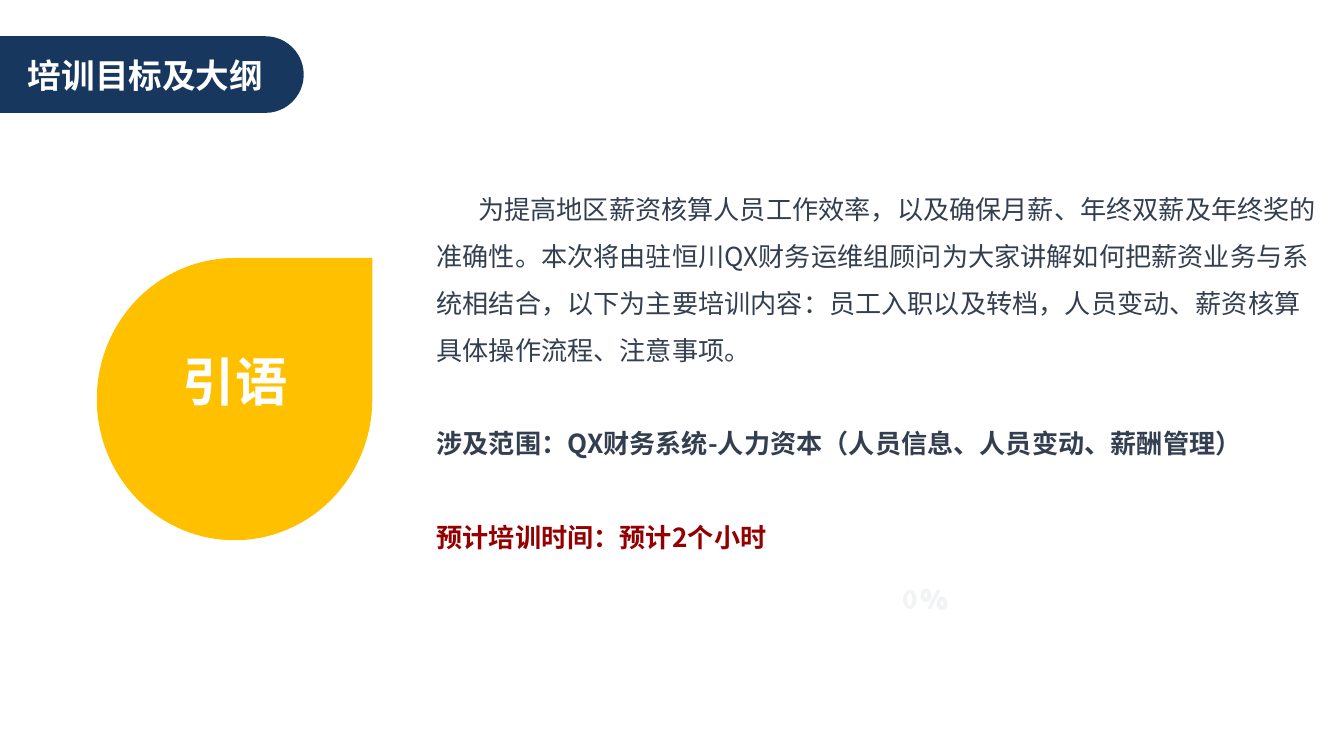
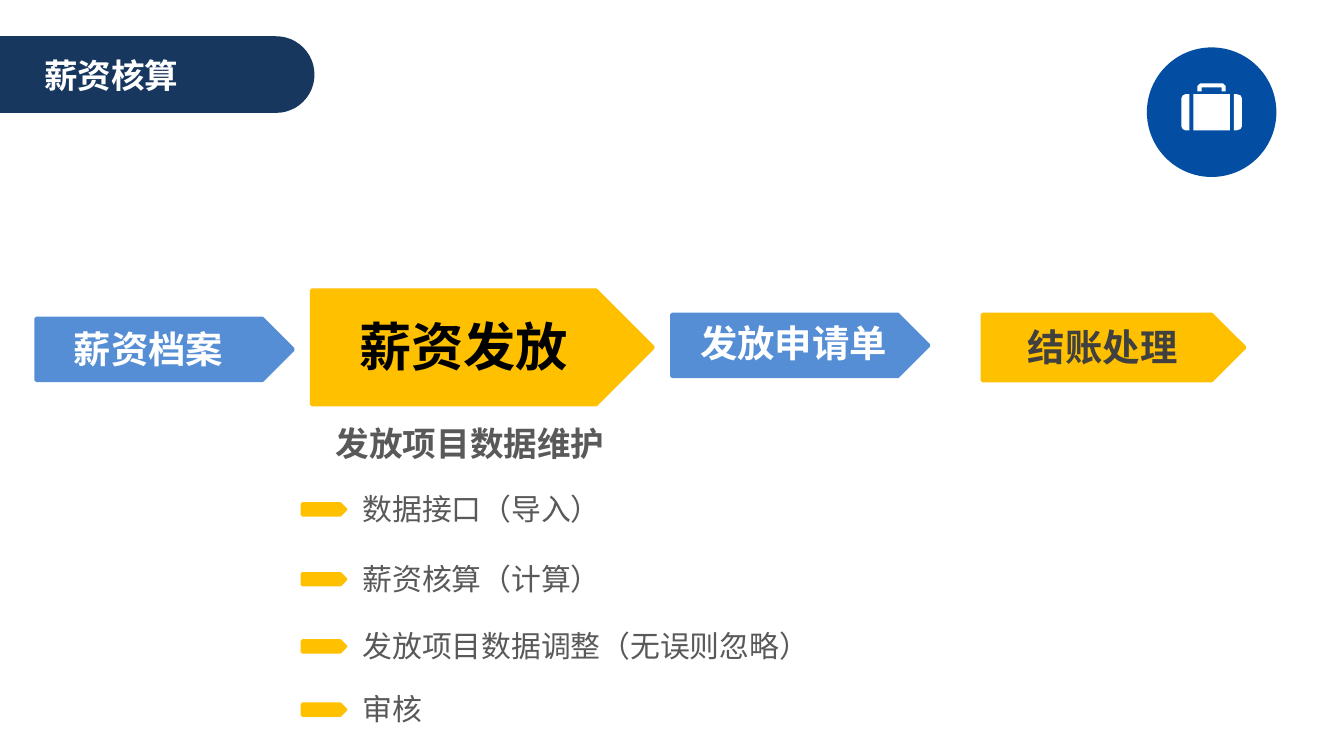
import math

from lxml import etree
from pptx import Presentation
from pptx import util as u
from pptx.dml.color import RGBColor
from pptx.enum import shapes, text
from pptx.oxml.ns import qn

FONT = "Noto Sans CJK SC"
COLORS = {
    "navy": "17375E", "royal": "034EA2", "blue": "558ED5", "gold": "FFC000",
    "white": "FFFFFF", "black": "000000", "slate": "333F50", "red": "940000",
    "gray": "595959", "charcoal": "404040", "faint": "F2F3F4",
}
KINDS = shapes.MSO_SHAPE


def write(slide, box, paragraphs, size, color, bold=False, align=text.PP_ALIGN.LEFT,
          inset=(0.1, 0.05), wrap=True, spacing=None):
    frame = slide.shapes.add_textbox(*map(u.Inches, box)).text_frame
    frame.word_wrap = wrap
    frame.auto_size = text.MSO_AUTO_SIZE.SHAPE_TO_FIT_TEXT
    frame.margin_left = frame.margin_right = u.Inches(inset[0])
    frame.margin_top = frame.margin_bottom = u.Inches(inset[1])
    if isinstance(paragraphs, str):
        paragraphs = [(paragraphs, color, bold, 0, 0)]
    for number, (words, tone, heavy, indent, before) in enumerate(paragraphs):
        line = frame.add_paragraph() if number else frame.paragraphs[0]
        line.alignment = align
        if spacing:
            line.line_spacing = spacing
        if before:
            line.space_before = u.Pt(before)
        if indent:
            line._p.get_or_add_pPr().set("indent", str(u.Inches(indent)))
        run = line.add_run()
        run.text = words
        run.font.size = u.Pt(size)
        run.font.bold = heavy
        run.font.color.rgb = RGBColor.from_string(COLORS[tone])
        run.font.name = FONT
        etree.SubElement(run._r.get_or_add_rPr(), qn("a:ea"), typeface=FONT)


def paint(part, color, border=0):
    part.shadow.inherit = False
    part.fill.solid()
    part.fill.fore_color.rgb = RGBColor.from_string(COLORS[color])
    if border:
        part.line.color.rgb = RGBColor.from_string(COLORS[color])
        part.line.width = u.Pt(border)
    else:
        part.line.fill.background()
    return part


deck = Presentation()
deck.slide_width = u.Inches(10)
deck.slide_height = deck.slide_width * 9 // 16
blank = deck.slide_layouts[6]
goals = deck.slides.add_slide(blank)
payroll = deck.slides.add_slide(blank)

drop = goals.shapes.add_shape(KINDS.TEAR, *map(u.Inches, (0.72, 1.92, 2.05, 2.1)))
paint(drop, "gold").adjustments[0] = 1
write(goals, (0.98, 2.81, 1.54, 0.31), "引语", 28, "white", bold=True,
      align=text.PP_ALIGN.CENTER, spacing=u.Pt(15))
introduction = [
    ("为提高地区薪资核算人员工作效率，以及确保月薪、年终双薪及年终奖的准确性。"
     "本次将由驻恒川QX财务运维组顾问为大家讲解如何把薪资业务与系统相结合，"
     "以下为主要培训内容：员工入职以及转档，人员变动、薪资核算具体操作流程、注意事项。",
     "slate", False, 0.31, 0),
    ("涉及范围：QX财务系统-人力资本（人员信息、人员变动、薪酬管理）", "slate", True, 0, 25),
    ("预计培训时间：预计2个小时", "red", True, 0, 25),
]
write(goals, (3.15, 1.27, 6.76, 2.93), introduction, 14, "slate", spacing=1.5)

badge = payroll.shapes.add_shape(KINDS.OVAL, *map(u.Inches, (8.54, 0.36, 0.95, 0.95)))
paint(badge, "royal", border=1)

turns = [math.tau * step / 24 for step in range(24)]
zero, upper, lower = [
    [[(x + rx * math.cos(turn), y + ry * math.sin(turn)) for turn in turns]
     for rx, ry in radii]
    for x, y, radii in [
        (6.77, 4.46, [(0.05, 0.07), (0.02, 0.05)]),
        (6.89, 4.43, [(0.04, 0.05), (0.01, 0.02)]),
        (7.01, 4.49, [(0.04, 0.05), (0.01, 0.02)]),
    ]
]
slash = [(7, 4.39), (6.93, 4.53), (6.9, 4.53), (6.97, 4.39)]
case = [
    [(8.91, 0.68), (8.91, 0.64), (8.93, 0.62), (9.1, 0.62), (9.12, 0.64), (9.12, 0.68),
     (9.09, 0.68), (9.09, 0.65), (8.94, 0.65), (8.94, 0.68)],
    [(8.85, 0.7), (8.82, 0.7), (8.8, 0.71), (8.79, 0.73),
     (8.79, 0.94), (8.8, 0.96), (8.82, 0.97), (8.85, 0.97)],
    [(8.88, 0.7), (9.15, 0.7), (9.15, 0.97), (8.88, 0.97)],
    [(9.18, 0.7), (9.2, 0.7), (9.23, 0.71), (9.24, 0.73),
     (9.24, 0.94), (9.23, 0.96), (9.2, 0.97), (9.18, 0.97)],
]
for slide, outlines, color in [
    (goals, zero, "faint"),
    (goals, [*upper, slash, *lower], "faint"),
    (payroll, case, "white"),
]:
    pen = slide.shapes.build_freeform(*map(u.Inches, outlines[0][0]))
    for outline in outlines:
        points = [(u.Inches(x), u.Inches(y)) for x, y in outline]
        pen.move_to(*points[0])
        pen.add_line_segments(points[1:], close=True)
    paint(pen.convert_to_shape(), color)

for slide, title, banner_left, title_left in [
    (goals, "培训目标及大纲", -0.38, 0.11),
    (payroll, "薪资核算", -0.3, 0.23),
]:
    banner = slide.shapes.add_shape(
        KINDS.ROUNDED_RECTANGLE, *map(u.Inches, (banner_left, 0.27, 2.64, 0.57)))
    paint(banner, "navy").adjustments[0] = 0.5
    write(slide, (title_left, 0.36, 2.01, 0.4), title, 18, "white", bold=True)

for step, arrow_box, label, size, fill, ink in [
    ("薪资档案", (0.27, 2.37, 1.91, 0.46), (0.2, 2.39, 1.81, 0.41), 20, "blue", "white"),
    ("薪资发放", (2.32, 2.16, 2.54, 0.85), (2.36, 2.3, 2.18, 0.55), 28, "gold", "black"),
    ("发放申请单", (5, 2.34, 1.91, 0.46), (5.11, 2.34, 1.59, 0.41), 20, "blue", "white"),
    ("结账处理", (7.31, 2.34, 1.95, 0.49), (7.31, 2.37, 1.79, 0.41), 20, "gold", "charcoal"),
]:
    arrow = payroll.shapes.add_shape(KINDS.PENTAGON, *map(u.Inches, arrow_box))
    paint(arrow, fill, border=2)
    write(payroll, label, step, size, ink, bold=True,
          align=text.PP_ALIGN.CENTER, inset=(0.07, 0.04))

write(payroll, (2.4, 3.1, 2.21, 0.4), "发放项目数据维护", 18, "gray", bold=True, wrap=False)
for task, top in [
    ("数据接口（导入）", 3.6),
    ("薪资核算（计算）", 4.12),
    ("发放项目数据调整（无误则忽略）", 4.62),
    ("审核", 5.09),
]:
    marker = payroll.shapes.add_shape(
        KINDS.PENTAGON, *map(u.Inches, (2.25, top + 0.15, 0.32, 0.08)))
    paint(marker, "gold", border=2)
    write(payroll, (2.6, top, 0.2 + len(task) * 16 / 72, 0.37), task, 16, "gray", wrap=False)

deck.save("out.pptx")
